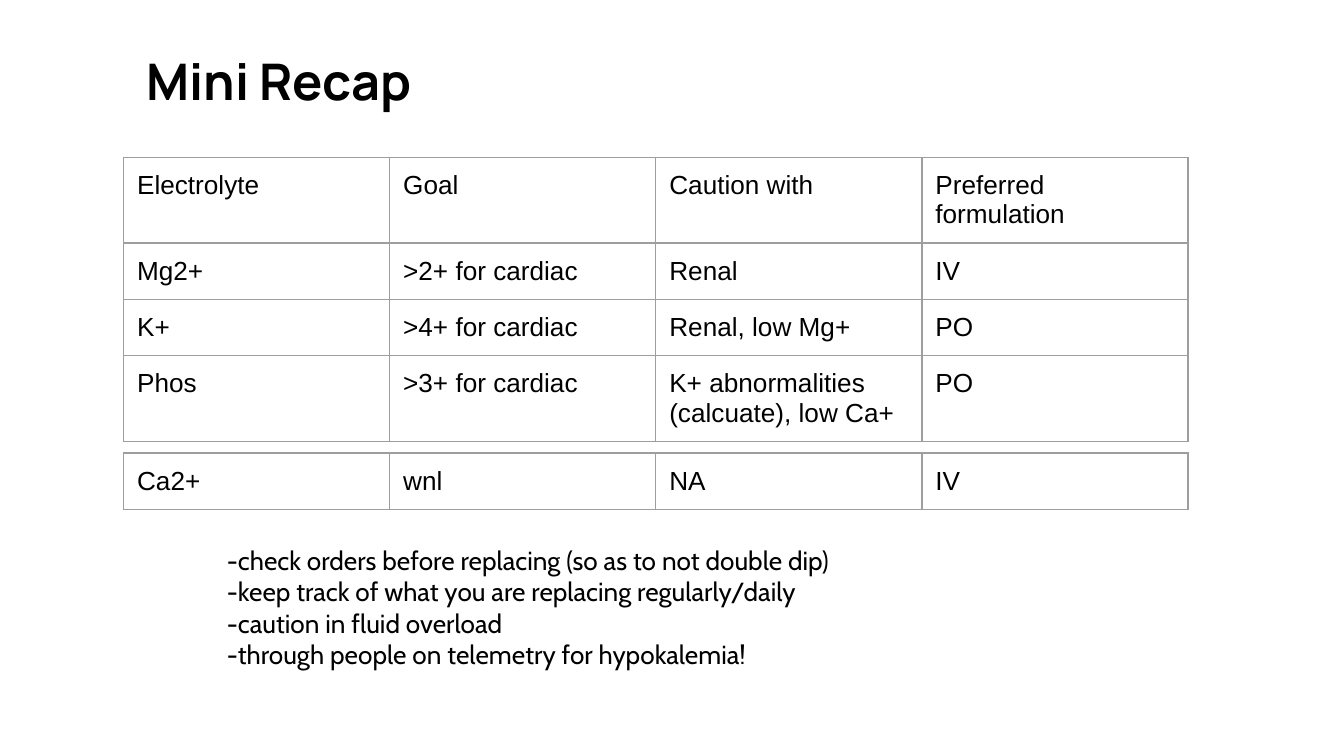
"""Build the electrolyte replacement recap slide."""
from lxml import etree
from pptx import Presentation
from pptx.dml.color import RGBColor
from pptx.enum.text import MSO_AUTO_SIZE
from pptx.oxml.ns import qn
from pptx.util import Inches, Pt

BLACK = RGBColor(0x00, 0x00, 0x00)
BORDER_GREY = RGBColor(0x9E, 0x9E, 0x9E)
FIT_SHAPE = MSO_AUTO_SIZE.SHAPE_TO_FIT_TEXT
NO_FIT = MSO_AUTO_SIZE.NONE

TITLE = "Mini Recap"
MAIN_ROWS = [
    ("Electrolyte", "Goal", "Caution with", "Preferred formulation"),
    ("Mg2+", ">2+ for cardiac", "Renal", "IV"),
    ("K+", ">4+ for cardiac", "Renal, low Mg+", "PO"),
    ("Phos", ">3+ for cardiac", "K+ abnormalities (calcuate), low Ca+", "PO"),
]
CALCIUM_ROWS = [("Ca2+", "wnl", "NA", "IV")]
REMINDERS = [
    "-check orders before replacing (so as to not double dip)",
    "-keep track of what you are replacing regularly/daily",
    "-caution in fluid overload",
    "-through people on telemetry for hypokalemia!",
]

SLIDE_WIDTH = 10
SLIDE_HEIGHT = SLIDE_WIDTH * 9 / 16
TABLE_LEFT = 0.92
COLUMN_WIDTH = 1.98
ROW_HEIGHT = 0.42
PADDING = Inches(0.1)


def set_margins(target):
    target.margin_left = target.margin_right = PADDING
    target.margin_top = target.margin_bottom = PADDING


def style_font(paragraph, name, size, bold=False):
    font = paragraph.font
    font.name, font.size, font.bold = name, Pt(size), bold
    font.color.rgb = BLACK


def add_text(slide, box, lines, name, size, bold=False, auto_size=NO_FIT):
    frame = slide.shapes.add_textbox(*map(Inches, box)).text_frame
    frame.word_wrap = True
    frame.auto_size = auto_size
    set_margins(frame)
    frame.text = "\n".join(lines)
    for paragraph in frame.paragraphs:
        style_font(paragraph, name, size, bold)


def add_borders(cell):
    properties = cell._tc.get_or_add_tcPr()
    for side in ("a:lnL", "a:lnR", "a:lnT", "a:lnB"):
        line = etree.SubElement(properties, qn(side), w=str(Pt(0.75)))
        fill = etree.SubElement(line, qn("a:solidFill"))
        etree.SubElement(fill, qn("a:srgbClr"), val=str(BORDER_GREY))


def add_grid(slide, top, rows):
    columns = len(rows[0])
    table = slide.shapes.add_table(
        len(rows), columns, Inches(TABLE_LEFT), Inches(top),
        Inches(COLUMN_WIDTH * columns), Inches(ROW_HEIGHT * len(rows))).table
    table.first_row = table.horz_banding = False
    for row, texts in enumerate(rows):
        for column, text in enumerate(texts):
            cell = table.cell(row, column)
            cell.text = text
            set_margins(cell)
            add_borders(cell)
            cell.fill.background()
            style_font(cell.text_frame.paragraphs[0], "Arial", 14)


def main():
    presentation = Presentation()
    presentation.slide_width = Inches(SLIDE_WIDTH)
    presentation.slide_height = Inches(SLIDE_HEIGHT)
    slide = presentation.slides.add_slide(presentation.slide_layouts[6])
    add_text(slide, (0.99, 0.27, 3.61, 0.68), [TITLE], "Manrope", 27, bold=True)
    add_grid(slide, 1.17, MAIN_ROWS)
    add_grid(slide, 3.37, CALCIUM_ROWS)
    add_text(slide, (1.59, 3.95, 6.57, 1.14), REMINDERS, "Cabin", 14, auto_size=FIT_SHAPE)
    presentation.save("out.pptx")


if __name__ == "__main__":
    main()
